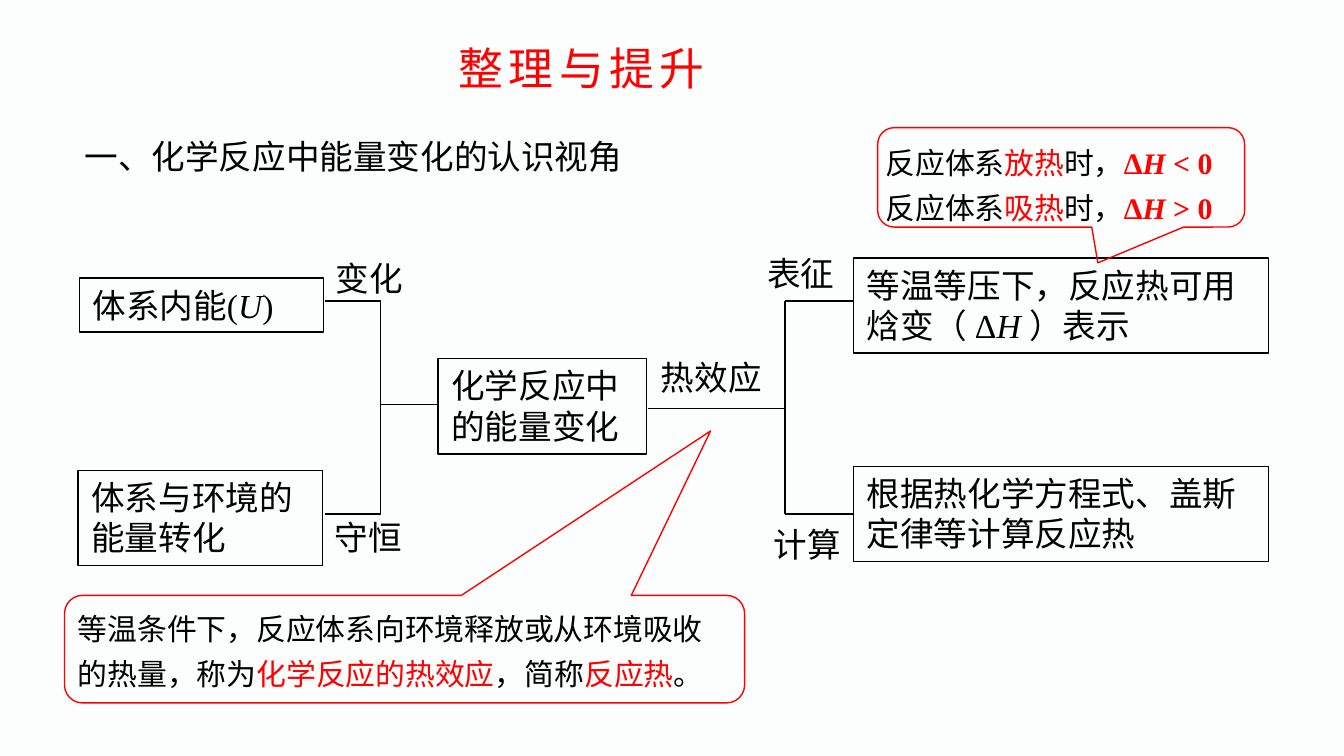
from lxml.etree import SubElement
from pptx import Presentation
from pptx.dml.color import RGBColor
from pptx.enum.shapes import MSO_CONNECTOR, MSO_SHAPE
from pptx.enum.text import MSO_ANCHOR, MSO_AUTO_SIZE, PP_ALIGN
from pptx.oxml.ns import qn
from pptx.util import Pt

BLACK = RGBColor(0x00, 0x00, 0x00)
RED = RGBColor(0xFF, 0x00, 0x00)
BACKGROUND = RGBColor(0xFC, 0xFD, 0xFD)
SANS = "Noto Sans CJK SC"
SERIF = "Times New Roman"


def add_runs(paragraph, pieces, size, font_name):
    """Append runs from (text, colour, emphasis) pieces; emphasis holds "b" and/or "i"."""
    paragraph.alignment = PP_ALIGN.LEFT
    for text, colour, emphasis in pieces:
        run = paragraph.add_run()
        run.text = text
        run.font.size = Pt(size)
        run.font.bold = "b" in emphasis
        run.font.italic = "i" in emphasis
        run.font.color.rgb = colour
        run.font.name = font_name
        SubElement(run.font._element, qn("a:ea")).set("typeface", SANS)


def add_outline(preset, left, top, width, height, colour):
    """Add an unfilled preset shape with a thin outline."""
    shape = slide.shapes.add_shape(preset, Pt(left), Pt(top), Pt(width), Pt(height))
    shape.shadow.inherit = False
    shape.fill.background()
    shape.line.color.rgb = colour
    shape.line.width = Pt(0.75)
    return shape


presentation = Presentation()
presentation.slide_width = Pt(720)
presentation.slide_height = Pt(405)
slide = presentation.slides.add_slide(presentation.slide_layouts[5])
slide.background.fill.solid()
slide.background.fill.fore_color.rgb = BACKGROUND

# Title
title = slide.shapes.title
title.left, title.top, title.width, title.height = Pt(238.3), Pt(18), Pt(151.2), Pt(36)
title.text_frame.word_wrap = False
title.text_frame.auto_size = MSO_AUTO_SIZE.NONE
title.text_frame.vertical_anchor = MSO_ANCHOR.TOP
add_runs(title.text_frame.paragraphs[0], [("整理与提升", RED, "")], 24, SANS)
title.text_frame.paragraphs[0].runs[0].font._element.set("spc", "300")

# Section heading and the labels on the branches
labels = [
    ("一、化学反应中能量变化的认识视角", 38.2, 69.1, 388.8),
    ("变化", 172.8, 134.6, 60.5),
    ("守恒", 172.1, 273.6, 60.5),
    ("表征", 403.9, 131.8, 60.5),
    ("计算", 407.5, 277.2, 60.5),
    ("热效应", 347, 187.9, 72.7),
]
for text, left, top, width in labels:
    label = slide.shapes.add_textbox(Pt(left), Pt(top), Pt(width), Pt(29))
    label.text_frame.word_wrap = True
    add_runs(label.text_frame.paragraphs[0], [(text, BLACK, "")], 18, SANS)

# Concept boxes
concepts = [
    ([("化学反应中的能量变化", BLACK, "")], 234.7, 192.2, 111.6, 51, SANS),
    ([("体系内能(", BLACK, ""), ("U", BLACK, "i"), (")", BLACK, "")],
     42.5, 149, 131, 29, SERIF),
    ([("体系与环境的能量转化", BLACK, "")], 41.8, 252, 131, 51, SERIF),
    ([("等温等压下，反应热可用焓变（ Δ", BLACK, ""), ("H ", BLACK, "i"),
      ("）表示", BLACK, "")], 457.2, 138.2, 222.5, 51, SERIF),
    ([("根据热化学方程式、盖斯定律等计算反应热", BLACK, "")],
     457.2, 249.8, 222.5, 51, SERIF),
]
for pieces, left, top, width, height, font_name in concepts:
    concept = add_outline(MSO_SHAPE.RECTANGLE, left, top, width, height, BLACK)
    concept.text_frame.word_wrap = True
    concept.text_frame.vertical_anchor = MSO_ANCHOR.TOP
    add_runs(concept.text_frame.paragraphs[0], pieces, 18, font_name)

# Brackets: trunk x, stem end x, stem y, branch end x
BRANCH_TOP, BRANCH_BOTTOM = 161.3, 275.4
for trunk, stem_end, stem_y, branch_end in [
    (204, 234.7, 216.7, 174.2),
    (420.5, 347, 218.9, 457.2),
]:
    for x1, y1, x2, y2 in [
        (trunk, stem_y, stem_end, stem_y),
        (trunk, BRANCH_TOP, trunk, BRANCH_BOTTOM),
        (trunk, BRANCH_TOP, branch_end, BRANCH_TOP),
        (trunk, BRANCH_BOTTOM, branch_end, BRANCH_BOTTOM),
    ]:
        line = slide.shapes.add_connector(
            MSO_CONNECTOR.STRAIGHT, Pt(x1), Pt(y1), Pt(x2), Pt(y2))
        line.line.color.rgb = BLACK
        line.line.width = Pt(0.75)
        SubElement(line._element.spPr, qn("a:effectLst"))

# Callouts: paragraphs, text box, outline, pointer offset, font
definition = [[
    ("等温条件下，反应体系向环境释放或从环境吸收的热量，称为", BLACK, ""),
    ("化学反应的热效应", RED, ""),
    ("，简称", BLACK, ""),
    ("反应热", RED, ""),
    ("。", BLACK, ""),
]]
sign_rules = [
    [("反应体系", BLACK, ""), (change, RED, ""), ("时，", BLACK, ""),
     ("Δ", RED, "b"), ("H ", RED, "bi"), (sign, RED, "b")]
    for change, sign in [("放热", "< 0"), ("吸热", "> 0")]
]
callouts = [
    (definition, (34.6, 319, 359.3, 55.4), (34.6, 319, 364.3, 57.6), (0.45, -2.03), SANS),
    (sign_rules, (467.3, 69.1, 214.6, 55.4), (470.2, 68.4, 196.6, 53.3), (0.1, 0.86), SERIF),
]
for paragraphs, text_area, outline_area, pointer, font_name in callouts:
    note = slide.shapes.add_textbox(*map(Pt, text_area))
    note.text_frame.word_wrap = True
    for index, pieces in enumerate(paragraphs):
        paragraph = note.text_frame.add_paragraph() if index else note.text_frame.paragraphs[0]
        paragraph.line_spacing = 1.25
        add_runs(paragraph, pieces, 16, font_name)
    bubble = add_outline(MSO_SHAPE.ROUNDED_RECTANGULAR_CALLOUT, *outline_area, RED)
    bubble.adjustments[0], bubble.adjustments[1] = pointer

presentation.save("out.pptx")
